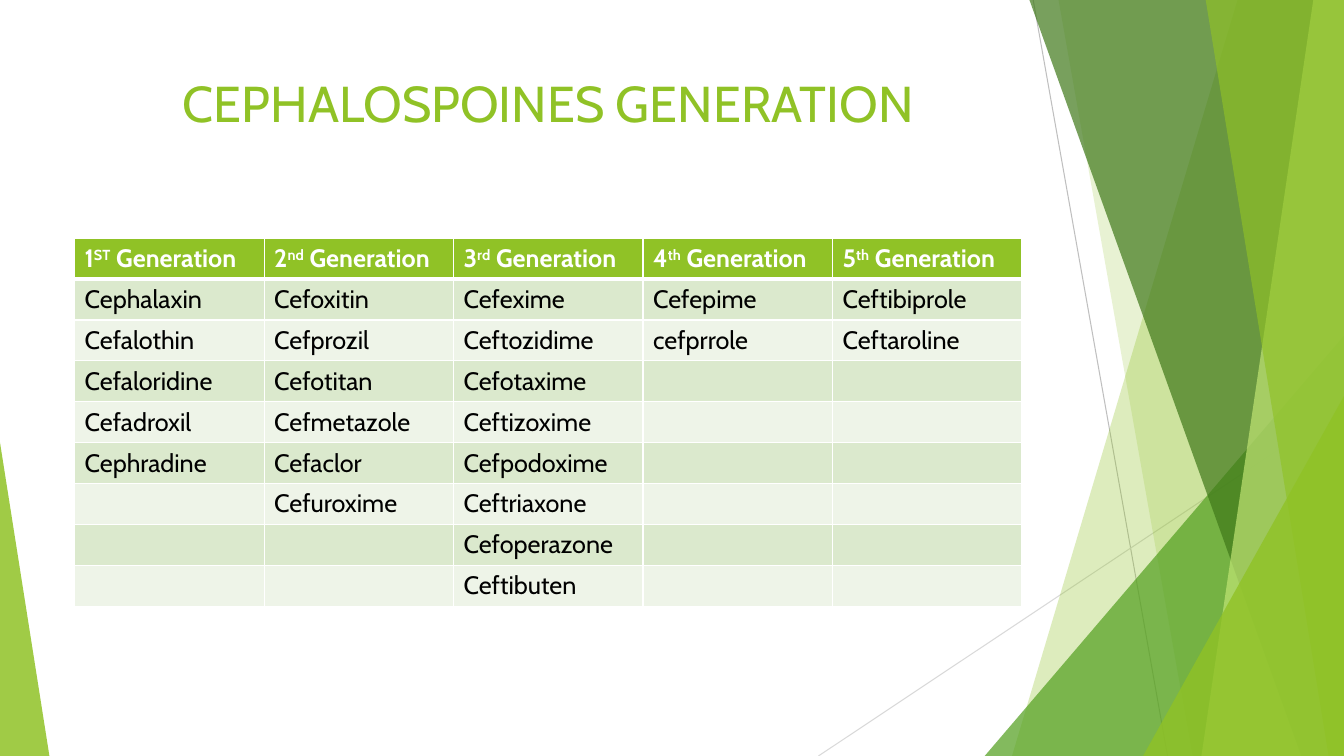
from itertools import zip_longest
from lxml import etree
from pptx import Presentation
from pptx.dml.color import RGBColor
from pptx.enum.shapes import MSO_CONNECTOR, MSO_SHAPE
from pptx.enum.text import MSO_ANCHOR, PP_ALIGN
from pptx.oxml import parse_xml
from pptx.oxml.ns import qn
from pptx.util import Pt

LINE = MSO_CONNECTOR.STRAIGHT
TRI = MSO_SHAPE.ISOSCELES_TRIANGLE
NS = "http://schemas.openxmlformats.org/drawingml/2006/main"
FONT = "Cabin"
HEX = {"lime": "90C226", "green": "54A021", "dark": "3F7819", "pale": "C0E474",
       "gray": "BFBFBF", "mist": "D9D9D9", "odd": "DBE9CD", "even": "EEF4E8",
       "white": "FFFFFF", "black": "000000"}
RGB = {name: RGBColor.from_string(code) for name, code in HEX.items()}
WIDE, HIGH = 960, 540
TOP = -0.7


def style(font, color, **values):
    """Set the deck font, a colour and any other font values."""
    font.name = FONT
    font.color.rgb = RGB[color]
    for key, value in values.items():
        setattr(font, key, value)


def paint(shape, color, alpha):
    """Fill a shape with a colour of the given opacity in percent, without line."""
    shape.shadow.inherit = False
    shape.line.fill.background()
    shape.fill.solid()
    shape.fill.fore_color.rgb = RGB[color]
    tint = shape.fill._xPr.find(".//" + qn("a:srgbClr"))
    etree.SubElement(tint, qn("a:alpha")).set("val", str(alpha * 1000))


prs = Presentation()
prs.slide_width, prs.slide_height = Pt(WIDE), Pt(HIGH)
slide = prs.slides.add_slide(prs.slide_layouts[5])
shapes = slide.shapes

# Thin lines behind the facets
for x1, y1, x2, y2, color in [(738, 0, 834, HIGH, "gray"),
                              (WIDE, 290, 584.6, HIGH, "mist")]:
    line = shapes.add_connector(LINE, Pt(x1), Pt(y1), Pt(x2), Pt(y2))
    line.line.color.rgb = RGB[color]
    line.line.width = Pt(0.75)
    etree.SubElement(line._element.spPr, qn("a:effectLst"))

# Facets, back to front: a band has its left edge's top x, its top right x,
# and its bottom right and left x; a corner has left, top, width and apex.
facets = [
    ("band", (884.2, WIDE, WIDE, 722.9), "lime", 30),
    ("band", (756, WIDE, WIDE, 851.8), "lime", 20),
    ("corner", (703.4, 239.8, 256.6, 1), "green", 72),
    ("band", (735.1, WIDE, 929.5, 929.5), "dark", 70),
    ("band", (938.2, WIDE, WIDE, 858.2), "pale", 70),
    ("band", (861.1, WIDE, 949, 949), "lime", 65),
    ("corner", (816.5, 283, 143.5, 1), "lime", 80),
    ("corner", (0, 316.1, 35.3, 0), "lime", 85),
]
for kind, place, color, alpha in facets:
    if kind == "band":
        x1, x2, x3, x4 = place
        path = shapes.build_freeform(Pt(x1), Pt(TOP), scale=1.0)
        path.add_line_segments([(Pt(x2), Pt(TOP)), (Pt(WIDE), Pt(HIGH)),
                                (Pt(x4), Pt(HIGH))], close=True)
        facet = path.convert_to_shape()
    else:
        left, top, width, apex = place
        facet = shapes.add_shape(TRI, Pt(left), Pt(top), Pt(width), Pt(HIGH - top))
        facet.adjustments[0] = apex
    paint(facet, color, alpha)

# Title
title = shapes.title
spot = {"left": 53.3, "top": 48, "width": 676.8, "height": 104}
for key, value in spot.items():
    setattr(title, key, Pt(value))
title.text_frame.text = "CEPHALOSPOINES GENERATION"
title.text_frame.vertical_anchor = MSO_ANCHOR.TOP
title.text_frame.word_wrap = True
head = title.text_frame.paragraphs[0]
head.alignment = PP_ALIGN.CENTER
style(head.runs[0].font, "lime", size=Pt(36))

# Table of drugs by generation
ranks = ["ST", "nd", "rd", "th", "th"]
drugs = [
    ["Cephalaxin", "Cefalothin", "Cefaloridine", "Cefadroxil", "Cephradine"],
    ["Cefoxitin", "Cefprozil", "Cefotitan", "Cefmetazole", "Cefaclor", "Cefuroxime"],
    ["Cefexime", "Ceftozidime", "Cefotaxime", "Ceftizoxime", "Cefpodoxime",
     "Ceftriaxone", "Cefoperazone", "Ceftibuten"],
    ["Cefepime", "cefprrole"],
    ["Ceftibiprole", "Ceftaroline"],
]
rows = [ranks, *zip_longest(*drugs, fillvalue="")]
COL, ROW = 135.36, 29.2
table = shapes.add_table(len(rows), len(ranks), Pt(53.3), Pt(170.2),
                         Pt(COL * len(ranks)), Pt(ROW * len(rows))).table
for col in table.columns:
    col.width = Pt(COL)
for r, words in enumerate(rows):
    table.rows[r].height = Pt(ROW)
    for c, word in enumerate(words):
        cell = table.cell(r, c)
        for side in "LRTB":
            thick = (r, side) in [(0, "B"), (1, "T")]
            cell._tc.get_or_add_tcPr().append(parse_xml(
                f'<a:ln{side} xmlns:a="{NS}" w="{Pt(3 if thick else 1)}"><a:solidFill>'
                f'<a:srgbClr val="{HEX["white"]}"/></a:solidFill></a:ln{side}>'))
        cell.fill.solid()
        cell.fill.fore_color.rgb = RGB["lime" if r == 0 else "odd" if r % 2 else "even"]
        parts = [str(c + 1), word, " Generation"] if r == 0 else [word] if word else []
        for part in parts:
            run = cell.text_frame.paragraphs[0].add_run()
            run.text = part
            style(run.font, "black" if r else "white", size=Pt(18), bold=r == 0)
            if r == 0 and part == word:
                run.font._element.set("baseline", "30000")

prs.save("out.pptx")
